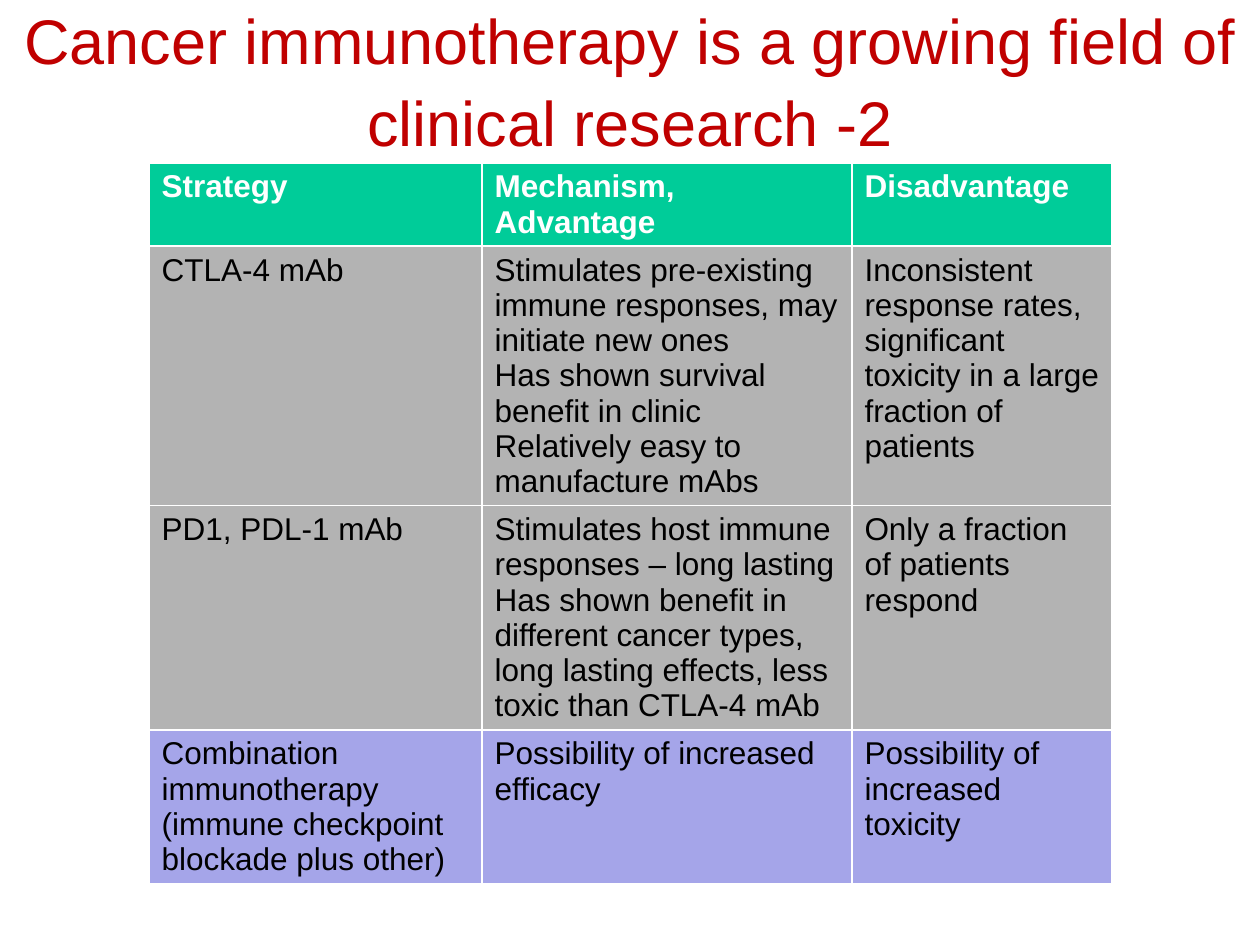
"""Build a slide with a table comparing cancer immunotherapy strategies."""
from pptx import Presentation
from pptx.dml.color import RGBColor as Rgb
from pptx.enum.text import MSO_ANCHOR as Anchor, PP_ALIGN as Align
from pptx.util import Pt

PX = 914400 // 126
FONT = "Arial"
COLORS = {
    "title": "C00000",
    "header": "00CC99",
    "single": "B3B3B3",
    "combined": "A5A5E9",
    "light": "FFFFFF",
    "dark": "000000",
}
COLUMN_WIDTHS = [333, 370, 260]
ROWS = [
    (83, "header", [["Strategy"], ["Mechanism, Advantage"], ["Disadvantage"]]),
    (259, "single", [
        ["CTLA-4 mAb"],
        ["Stimulates pre-existing immune responses, may initiate new ones",
         "Has shown survival benefit in clinic",
         "Relatively easy to manufacture mAbs"],
        ["Inconsistent response rates, significant toxicity in a large fraction of patients"],
    ]),
    (224, "single", [
        ["PD1, PDL-1 mAb"],
        ["Stimulates host immune responses – long lasting",
         "Has shown benefit in different cancer types, long lasting effects, "
         "less toxic than CTLA-4 mAb"],
        ["Only a fraction of patients respond"],
    ]),
    (153, "combined", [
        ["Combination immunotherapy (immune checkpoint blockade plus other)"],
        ["Possibility of increased efficacy"],
        ["Possibility of increased toxicity"],
    ]),
]


def add_span(para, text, size, color, bold=False):
    span = para.add_run()
    span.text = text
    span.font.name = FONT
    span.font.size = Pt(size)
    span.font.bold = bold
    span.font.color.rgb = Rgb.from_string(COLORS[color])


deck = Presentation()
deck.slide_width = 1260 * PX
deck.slide_height = 945 * PX
page = deck.slides.add_slide(deck.slide_layouts[5])

title = page.shapes.title
title.left, title.top, title.width, title.height = 0, 1 * PX, 1260 * PX, 158 * PX
frame = title.text_frame
frame.word_wrap = True
frame.vertical_anchor = Anchor.BOTTOM
frame.margin_top = frame.margin_bottom = 0
para = frame.paragraphs[0]
para.alignment = Align.CENTER
para.line_spacing = 1.08
add_span(para, "Cancer immunotherapy is a growing field of clinical research -2", 36, "title")

table_height = sum(height for height, _, _ in ROWS)
table = page.shapes.add_table(
    len(ROWS), len(COLUMN_WIDTHS),
    149 * PX, 163 * PX, sum(COLUMN_WIDTHS) * PX, table_height * PX,
).table
for column, width in zip(table.columns, COLUMN_WIDTHS):
    column.width = width * PX

for row, (height, kind, entries) in zip(table.rows, ROWS):
    row.height = height * PX
    is_header = kind == "header"
    for cell, lines in zip(row.cells, entries):
        cell.fill.solid()
        cell.fill.fore_color.rgb = Rgb.from_string(COLORS[kind])
        for index, line in enumerate(lines):
            frame = cell.text_frame
            para = frame.add_paragraph() if index else frame.paragraphs[0]
            add_span(para, line, 18, "light" if is_header else "dark", is_header)

deck.save("out.pptx")
